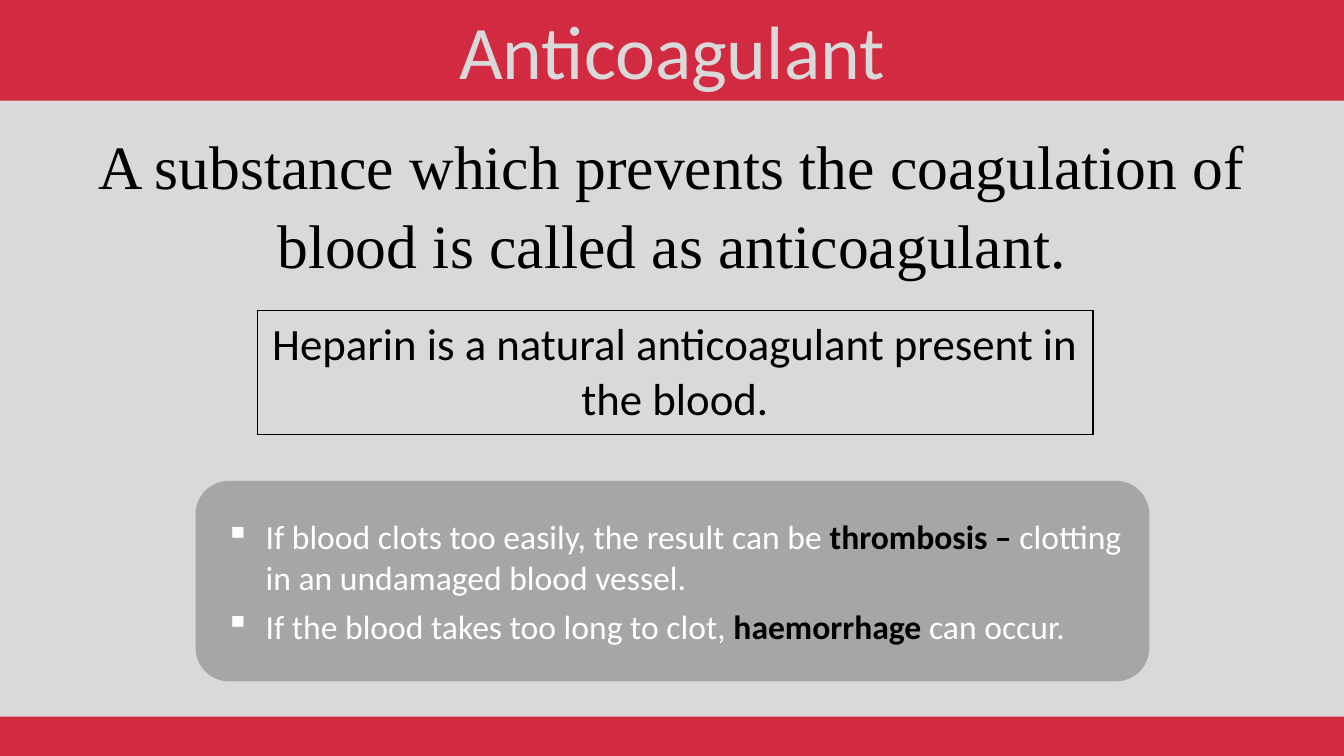
from dataclasses import dataclass

import pptx
import pptx.dml.color
import pptx.enum.shapes
import pptx.enum.text
import pptx.oxml
import pptx.oxml.ns
import pptx.util
from pptx.dml.color import RGBColor

RED = RGBColor(0xD2, 0x2B, 0x41)
LIGHT = RGBColor(0xD9, 0xD9, 0xD9)
GREY = RGBColor(0xA6, 0xA6, 0xA6)
BLACK = RGBColor(0x00, 0x00, 0x00)
WHITE = RGBColor(0xFF, 0xFF, 0xFF)

WIDTH = pptx.util.Inches(13.33)
HEIGHT = pptx.util.Inches(7.5)
SHAPE = pptx.enum.shapes.MSO_SHAPE
CENTER = pptx.enum.text.PP_ALIGN.CENTER
LEFT = pptx.enum.text.PP_ALIGN.LEFT
MIDDLE = pptx.enum.text.MSO_ANCHOR.MIDDLE


@dataclass(frozen=True)
class Box:
    """Place and size in percent of the slide."""
    x: float
    y: float
    w: float
    h: float

    def emu(self) -> tuple[int, int, int, int]:
        return (int(WIDTH * self.x / 100), int(HEIGHT * self.y / 100),
                int(WIDTH * self.w / 100), int(HEIGHT * self.h / 100))


@dataclass(frozen=True)
class Panel:
    box: Box
    kind: int
    fill: RGBColor


@dataclass(frozen=True)
class Run:
    text: str
    size: float
    color: RGBColor
    font: str = "Calibri"
    bold: bool = False


def xml(tag: str, attrs: str, inner: str = ""):
    return pptx.oxml.parse_xml(
        f'<a:{tag} {pptx.oxml.ns.nsdecls("a")} {attrs}>{inner}</a:{tag}>')


def add_panel(s, panel: Panel):
    sp = s.shapes.add_shape(panel.kind, *panel.box.emu())
    sp.shadow.inherit = False
    sp.fill.solid()
    sp.fill.fore_color.rgb = panel.fill
    sp.line.fill.background()
    return sp


def add_runs(p, runs: list[Run], **paragraph_format):
    for name, value in paragraph_format.items():
        setattr(p, name, value)
    for run in runs:
        r = p.add_run()
        r.text = run.text
        font_format = {"name": run.font, "size": pptx.util.Pt(run.size), "bold": run.bold}
        for name, value in font_format.items():
            setattr(r.font, name, value)
        r.font.color.rgb = run.color


def add_text(s, box: Box, run: Run, wrap: bool, **paragraph_format):
    tf = s.shapes.add_textbox(*box.emu()).text_frame
    tf.word_wrap = wrap
    add_runs(tf.paragraphs[0], [run], alignment=CENTER, **paragraph_format)
    return tf


def add_text_shadow(r) -> None:
    shadow = xml("effectLst", "",
                 '<a:outerShdw blurRad="38100" dist="38100" dir="2700000" algn="tl">'
                 '<a:srgbClr val="000000"><a:alpha val="43000"/></a:srgbClr></a:outerShdw>')
    r.font.fill.solid()
    r.font.color.rgb = BLACK
    r.font._element.find(pptx.oxml.ns.qn("a:solidFill")).addnext(shadow)


def add_framed_cell(s, box: Box, run: Run) -> None:
    table = s.shapes.add_table(1, 1, *box.emu()).table
    cell = table.cell(0, 0)
    cell.vertical_anchor = MIDDLE
    add_runs(cell.text_frame.paragraphs[0], [run], alignment=CENTER)
    tc_pr = cell._tc.get_or_add_tcPr()
    for side in ("lnL", "lnR", "lnT", "lnB"):
        tc_pr.append(xml(side, 'w="12700"',
                         f'<a:solidFill><a:srgbClr val="{BLACK}"/></a:solidFill>'))
    cell.fill.background()


def add_bullets(tf, items: list[list[Run]]) -> None:
    tf.word_wrap = True
    tf.vertical_anchor = MIDDLE
    for i, runs in enumerate(items):
        p = tf.add_paragraph() if i else tf.paragraphs[0]
        add_runs(p, runs, alignment=LEFT, space_after=pptx.util.Pt(6))
        p_pr = p._p.get_or_add_pPr()
        p_pr.set("marL", str(pptx.util.Inches(0.5)))
        p_pr.set("indent", str(pptx.util.Inches(-0.4)))
        p_pr.append(xml("buChar", 'char="▪"'))


def plain(text: str) -> Run:
    return Run(text, 24, WHITE)


def term(text: str) -> Run:
    return Run(text, 24, BLACK, bold=True)


BANDS = [
    Panel(Box(0, 0, 100, 13.33), SHAPE.RECTANGLE, RED),
    Panel(Box(0, 94.8, 100, 5.2), SHAPE.RECTANGLE, RED),
]
DISORDERS = Panel(Box(14.55, 63.6, 70.97, 26.53), SHAPE.ROUNDED_RECTANGLE, GREY)
DISORDER_ITEMS = [
    [plain("If blood clots too easily, the result can be "), term("thrombosis – "),
     plain("clotting in an undamaged blood vessel.")],
    [plain("If the blood takes too long to clot, "), term("haemorrhage"),
     plain(" can occur.")],
]


def main() -> None:
    prs = pptx.Presentation()
    prs.slide_width, prs.slide_height = WIDTH, HEIGHT
    s = prs.slides.add_slide(prs.slide_layouts[6])
    s.background.fill.solid()
    s.background.fill.fore_color.rgb = LIGHT

    # Header and footer bands, title
    for band in BANDS:
        add_panel(s, band)
    add_text(s, Box(33.23, -0.13, 33.53, 13.47), Run("Anticoagulant", 54, LIGHT), wrap=False)

    # Definition
    tf = add_text(
        s, Box(1.73, 15.73, 96.55, 21.07),
        Run("A substance which prevents the coagulation of blood is called as anticoagulant.",
            44, BLACK, "Times New Roman"),
        wrap=True, line_spacing=1.06)
    add_text_shadow(tf.paragraphs[0].runs[0])

    # Framed example
    add_framed_cell(s, Box(19.13, 41.07, 62.19, 16.4),
                    Run("Heparin is a natural anticoagulant present in the blood.", 32, BLACK))

    # Clotting disorders
    add_bullets(add_panel(s, DISORDERS).text_frame, DISORDER_ITEMS)

    prs.save("out.pptx")


if __name__ == "__main__":
    main()
